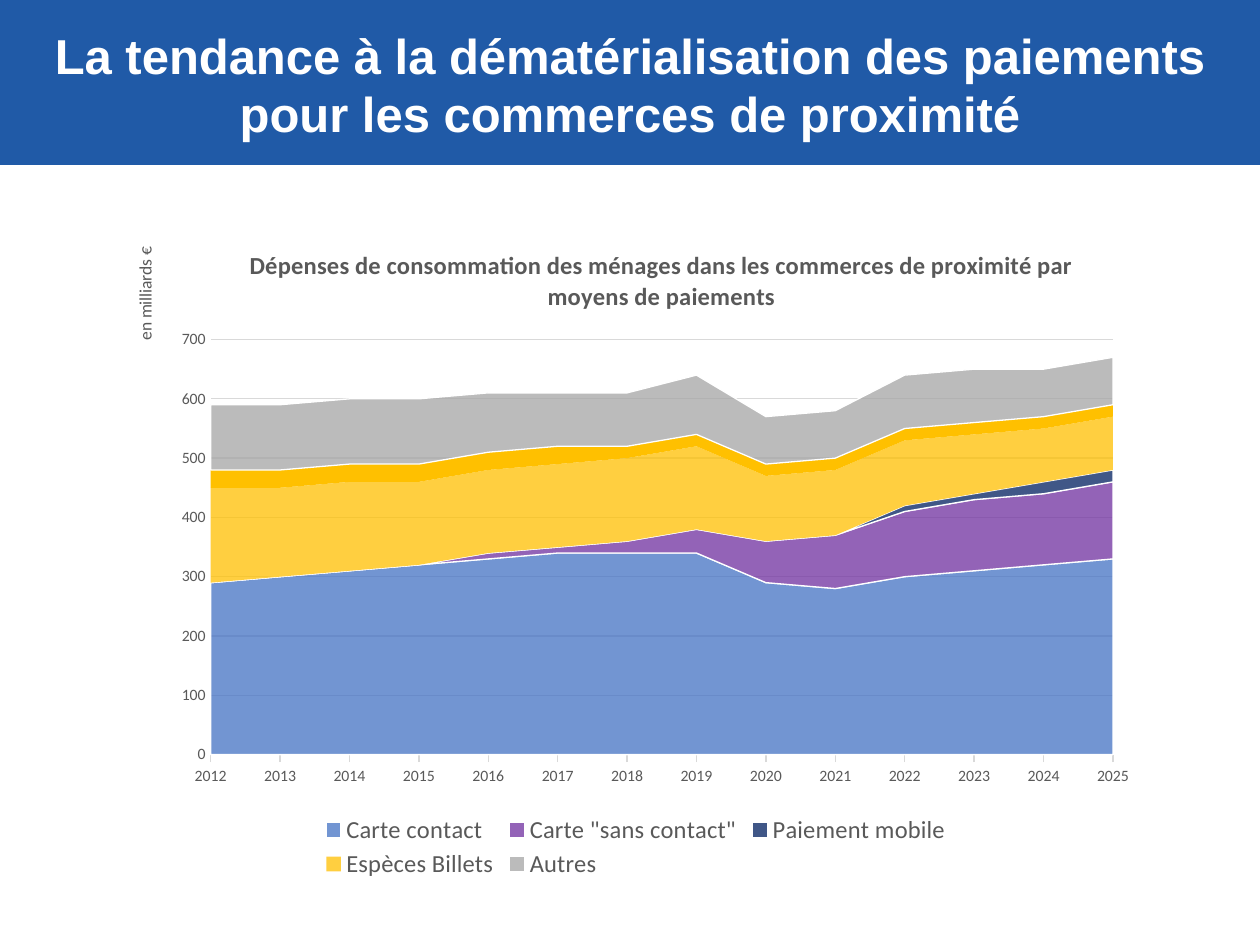
from lxml import etree
from pptx import Presentation
from pptx.chart.data import CategoryChartData
from pptx.dml.color import RGBColor
from pptx.enum import chart as kinds, shapes, text
from pptx.oxml.ns import qn
from pptx.util import Inches, Pt

BLUE = RGBColor(0x20, 0x5A, 0xA7)
WHITE = RGBColor(0xFF, 0xFF, 0xFF)
GRAY = RGBColor(0x59, 0x59, 0x59)
RULE = RGBColor(0xD9, 0xD9, 0xD9)
SKY = RGBColor(0x44, 0x72, 0xC4)
PLUM = RGBColor(0x70, 0x30, 0xA0)
NAVY = RGBColor(0x00, 0x20, 0x60)
GOLD = RGBColor(0xFF, 0xC0, 0x00)
ASH = RGBColor(0xA5, 0xA5, 0xA5)

HEAD = "La tendance à la dématérialisation des paiements pour les commerces de proximité"
TITLE = ("Dépenses de consommation des ménages dans les commerces "
         "de proximité par moyens de paiements")
UNIT = "en milliards €"
YEARS = [str(y) for y in range(2012, 2026)]
HIDDEN = 4
SERIES = [
    ("Carte contact", SKY, 75, True,
     (290, 300, 310, 320, 330, 340, 340, 340, 290, 280, 300, 310, 320, 330)),
    ('Carte "sans contact"', PLUM, 75, True,
     (0, 0, 0, 0, 10, 10, 20, 40, 70, 90, 110, 120, 120, 130)),
    ("Paiement mobile", NAVY, 75, True,
     (0, 0, 0, 0, 0, 0, 0, 0, 0, 0, 10, 10, 20, 20)),
    ("Espèces Billets", GOLD, 75, False,
     (160, 150, 150, 140, 140, 140, 140, 140, 110, 110, 110, 100, 90, 90)),
    ("Series 5", GOLD, 100, False,
     (30, 30, 30, 30, 30, 30, 20, 20, 20, 20, 20, 20, 20, 20)),
    ("Autres", ASH, 75, True,
     (110, 110, 110, 110, 100, 90, 90, 100, 80, 80, 90, 90, 80, 80)),
]


def style(font, size, color, name="Calibri", bold=False):
    font.size, font.name, font.bold = Pt(size), name, bold
    font.color.rgb = color


def add(parent, tag, val):
    return etree.SubElement(parent, qn(tag), val=str(val))


def place(node, inner=False, **spots):
    lay = node.find(qn("c:layout"))
    if lay is None:
        lay = etree.Element(qn("c:layout"))
        over = node.find(qn("c:overlay"))
        if over is None:
            node.insert(0, lay)
        else:
            over.addprevious(lay)
    for old in list(lay):
        lay.remove(old)
    man = etree.SubElement(lay, qn("c:manualLayout"))
    if inner:
        add(man, "c:layoutTarget", "inner")
    for key in "xy":
        add(man, f"c:{key}Mode", "edge")
    for key, val in spots.items():
        add(man, f"c:{key}", val)


def label(owner, words, size, bold, x, y):
    owner.has_title = True
    title = owner.chart_title if hasattr(owner, "chart_title") else owner.axis_title
    para = title.text_frame.paragraphs[0]
    para.text = words
    style(para.runs[0].font, size, GRAY, bold=bold)
    place(title._element, x=x, y=y)


def header(slide):
    bar = slide.shapes.add_shape(
        shapes.MSO_SHAPE.RECTANGLE, 0, 0, Inches(10.01), Inches(1.31))
    bar.shadow.inherit = False
    bar.fill.solid()
    bar.fill.fore_color.rgb = BLUE
    bar.line.fill.background()
    box = slide.shapes.add_textbox(0, Inches(0.15), Inches(10), Inches(1.04))
    frame = box.text_frame
    frame.word_wrap = True
    frame.text = HEAD
    para = frame.paragraphs[0]
    para.alignment = text.PP_ALIGN.CENTER
    style(para.runs[0].font, 28, WHITE, "Arial", True)


def paint(row, color, alpha, edge):
    fill = row.format.fill
    fill.solid()
    fill.fore_color.rgb = color
    if alpha < 100:
        tint = row._element.find(".//" + qn("a:srgbClr"))
        add(tint, "a:alpha", alpha * 1000)
    if edge:
        row.format.line.width = Pt(0.75)
        row.format.line.color.rgb = WHITE
    else:
        row.format.line.fill.background()


def rule(line):
    line.width = Pt(0.75)
    line.color.rgb = RULE


def area(slide):
    data = CategoryChartData(number_format="#,##0")
    data.categories = YEARS
    for name, _, _, _, vals in SERIES:
        data.add_series(name, vals)
    chart = slide.shapes.add_chart(
        kinds.XL_CHART_TYPE.AREA_STACKED, Inches(0.87), Inches(1.78),
        Inches(8.27), Inches(5.23), data).chart
    chart.font.size, chart.font.name = Pt(10), "Calibri"
    plot = chart.plots[0]
    plot.vary_by_categories = False
    for row, (_, color, alpha, edge, _) in zip(plot.series, SERIES):
        paint(row, color, alpha, edge)

    cat, val = chart.category_axis, chart.value_axis
    for axis in (cat, val):
        style(axis.tick_labels.font, 9, GRAY)
        axis.minor_tick_mark = kinds.XL_TICK_MARK.NONE
    cat.has_major_gridlines = False
    cat.major_tick_mark = kinds.XL_TICK_MARK.OUTSIDE
    rule(cat.format.line)
    val.minimum_scale, val.maximum_scale, val.major_unit = 0, 700, 100
    val.major_tick_mark = kinds.XL_TICK_MARK.NONE
    val.tick_labels.number_format = "#,##0"
    val.tick_labels.number_format_is_linked = False
    val.format.line.fill.background()
    val.has_major_gridlines = True
    rule(val.major_gridlines.format.line)
    val._element.find(qn("c:crossBetween")).set("val", "midCat")

    label(chart, TITLE, 14, True, 0.13, 0.03)
    label(val, UNIT, 10, False, 0.02, 0.03)
    val.axis_title.text_frame._txBody.find(qn("a:bodyPr")).set("rot", "-5400000")

    chart.has_legend = True
    key = chart.legend
    key.position = kinds.XL_LEGEND_POSITION.BOTTOM
    key.include_in_layout = False
    style(key.font, 14, GRAY)
    entry = etree.Element(qn("c:legendEntry"))
    add(entry, "c:idx", HIDDEN)
    add(entry, "c:delete", 1)
    key._element.find(qn("c:legendPos")).addnext(entry)
    place(key._element, x=0.2, y=0.89, w=0.61, h=0.11)
    place(chart._chartSpace.chart.plotArea, inner=True,
          x=0.097, y=0.175, w=0.866, h=0.63)


def main():
    deck = Presentation()
    deck.slide_width, deck.slide_height = Inches(10), Inches(7.5)
    slide = deck.slides.add_slide(deck.slide_layouts[6])
    header(slide)
    area(slide)
    deck.save("out.pptx")


if __name__ == "__main__":
    main()
